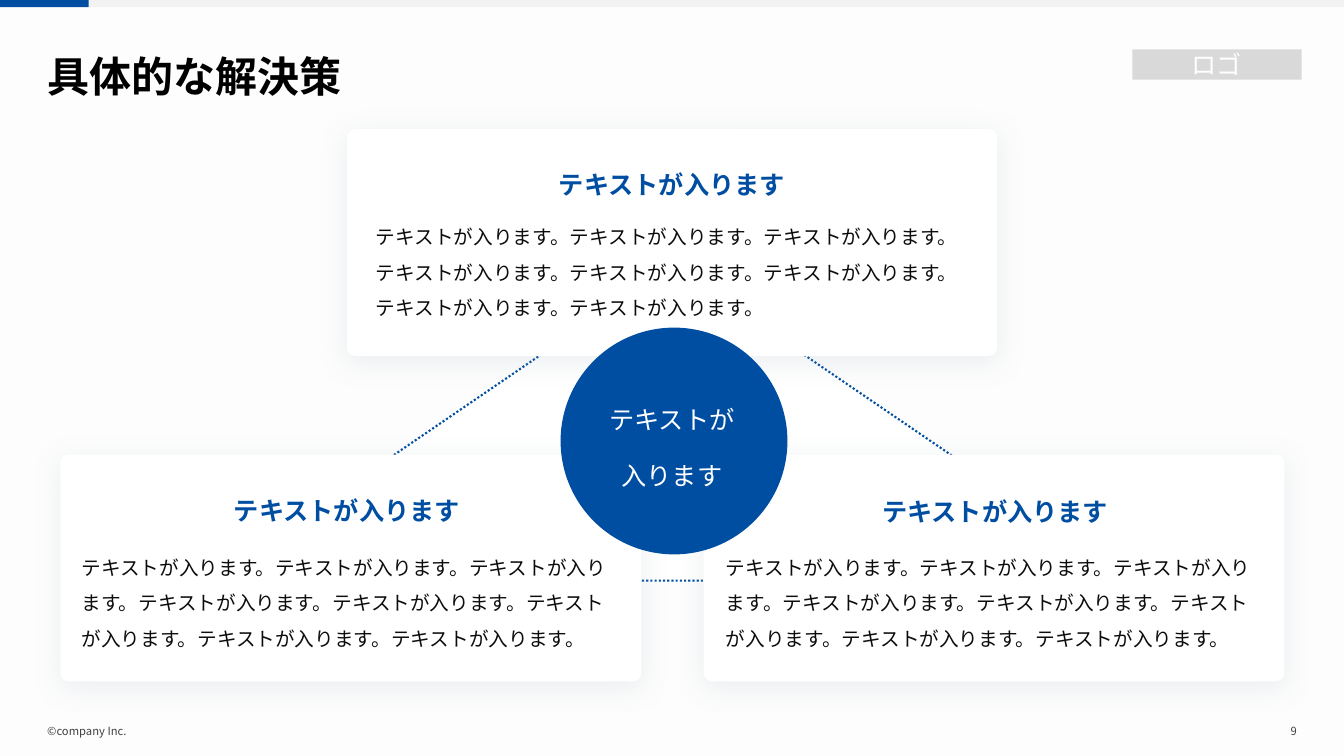
from dataclasses import dataclass

import pptx
import pptx.dml.color
import pptx.enum.dml
import pptx.enum.shapes
import pptx.enum.text
import pptx.oxml.ns
import pptx.util
from lxml import etree
from pptx.util import Inches

SHAPES = pptx.enum.shapes.MSO_SHAPE
ALIGN = pptx.enum.text.PP_ALIGN
ANCHOR = pptx.enum.text.MSO_ANCHOR
qn = pptx.oxml.ns.qn


@dataclass(frozen=True)
class Theme:
    font: str = "Noto Sans CJK JP"
    blue: str = "004EA2"
    white: str = "FFFFFF"
    black: str = "000000"
    body: str = "0D0D0D"
    footer: str = "404040"
    bar: str = "F2F2F2"
    logo: str = "D9D9D9"
    wash: str = "ECECEC"
    shadow: str = "9EAEB8"
    title_size: int = 30
    heading_size: int = 18
    body_size: int = 14
    footer_size: int = 8


THEME = Theme()
HEADING = "テキストが入ります"
BODY = (HEADING + "。") * 8


def rgb(color):
    return pptx.dml.color.RGBColor.from_string(color)


def add_solid(page, kind, area, color):
    shape = page.shapes.add_shape(kind, *map(Inches, area))
    shape.shadow.inherit = False
    shape.fill.solid()
    shape.fill.fore_color.rgb = rgb(color)
    shape.line.fill.background()
    return shape


def set_alpha(color_element, percent):
    etree.SubElement(color_element, qn("a:alpha"), val=str(percent * 1000))


def write_text(shape, lines, size, color, bold=False, align=ALIGN.LEFT,
               spacing=None, gap=None):
    frame = shape.text_frame
    frame.word_wrap = True
    frame.text = "\n".join(lines)
    for para in frame.paragraphs:
        para.alignment = align
        if spacing:
            para.line_spacing = spacing
        if gap:
            para.space_before = para.space_after = pptx.util.Pt(gap)
        for font in (para.font, *(span.font for span in para.runs)):
            font.name = THEME.font
            font.size = pptx.util.Pt(size)
            font.bold = bold
            font.color.rgb = rgb(color)
        for span in para.runs:
            properties = span._r.get_or_add_rPr()
            latin = properties.find(qn("a:latin"))
            latin.addnext(properties.makeelement(qn("a:ea"), typeface=THEME.font))


def add_label(page, area, text, size, color, bold=False, align=ALIGN.LEFT,
              spacing=None):
    box = page.shapes.add_textbox(*map(Inches, area))
    write_text(box, [text], size, color, bold, align, spacing)
    box.text_frame.vertical_anchor = ANCHOR.MIDDLE


def add_copy(page, area, lines, size, color, bold=False, align=ALIGN.LEFT):
    box = page.shapes.add_textbox(*map(Inches, area))
    write_text(box, lines, size, color, bold, align, spacing=1.5, gap=4)
    box.text_frame.auto_size = pptx.enum.text.MSO_AUTO_SIZE.SHAPE_TO_FIT_TEXT


def add_card(page, area, heading_area, body_area):
    card = add_solid(page, SHAPES.ROUNDED_RECTANGLE, area, THEME.white)
    card.adjustments[0] = 0.036
    effects = card._element.spPr.find(qn("a:effectLst"))
    shadow = etree.SubElement(
        effects, qn("a:outerShdw"), blurRad=str(pptx.util.Pt(20)),
        dist=str(pptx.util.Pt(4)), dir="5400000", algn="t", rotWithShape="0")
    set_alpha(etree.SubElement(shadow, qn("a:srgbClr"), val=THEME.shadow), 20)
    add_copy(page, heading_area, [HEADING], THEME.heading_size, THEME.blue,
             bold=True, align=ALIGN.CENTER)
    add_copy(page, body_area, [BODY], THEME.body_size, THEME.body)


def add_frame(page):
    wash = add_solid(page, SHAPES.RECTANGLE, (0, 0.08, 13.33, 7.42), THEME.wash)
    set_alpha(wash._element.spPr.find(qn("a:solidFill"))[0], 10)
    add_label(page, (12.39, 7.16, 0.57, 0.19), "9", THEME.footer_size,
              THEME.footer, align=ALIGN.RIGHT)
    add_label(page, (0.37, 7.16, 4.17, 0.19), "©company Inc.",
              THEME.footer_size, THEME.footer)
    for width, color in ((13.33, THEME.bar), (0.88, THEME.blue)):
        add_solid(page, SHAPES.RECTANGLE, (0, -0.01, width, 0.08), color)
    logo = add_solid(page, SHAPES.RECTANGLE, (11.23, 0.49, 1.68, 0.3), THEME.logo)
    write_text(logo, ["ロゴ"], THEME.heading_size, THEME.white, align=ALIGN.CENTER)
    add_label(page, (0.37, 0.45, 9.91, 0.67), "具体的な解決策",
              THEME.title_size, THEME.black, bold=True, spacing=0.9)


def add_triangle(page):
    triangle = add_solid(page, SHAPES.ISOSCELES_TRIANGLE,
                         (2.08, 2.63, 9.18, 3.13), THEME.white)
    triangle.line.color.rgb = rgb(THEME.blue)
    triangle.line.width = pptx.util.Pt(1.5)
    triangle.line.dash_style = pptx.enum.dml.MSO_LINE.ROUND_DOT


def add_hub(page):
    add_solid(page, SHAPES.OVAL, (5.56, 3.25, 2.25, 2.25), THEME.blue)
    add_copy(page, (4.9, 3.81, 3.53, 1.08), ["テキストが", "入ります"],
             THEME.heading_size, THEME.white, align=ALIGN.CENTER)


def main():
    deck = pptx.Presentation()
    deck.slide_width, deck.slide_height = Inches(13.33), Inches(7.5)
    page = deck.slides.add_slide(deck.slide_layouts[6])
    add_frame(page)
    add_triangle(page)
    add_card(page, (0.6, 4.51, 5.76, 2.25),
             (1.75, 4.71, 3.38, 0.52), (0.71, 5.35, 5.58, 1.13))
    add_card(page, (6.98, 4.51, 5.76, 2.25),
             (8.36, 4.72, 3.02, 0.52), (7.1, 5.35, 5.58, 1.13))
    add_card(page, (3.44, 1.28, 6.45, 2.25),
             (4.9, 1.48, 3.53, 0.52), (3.63, 2.07, 6.08, 1.13))
    add_hub(page)
    deck.save("out.pptx")


if __name__ == "__main__":
    main()
